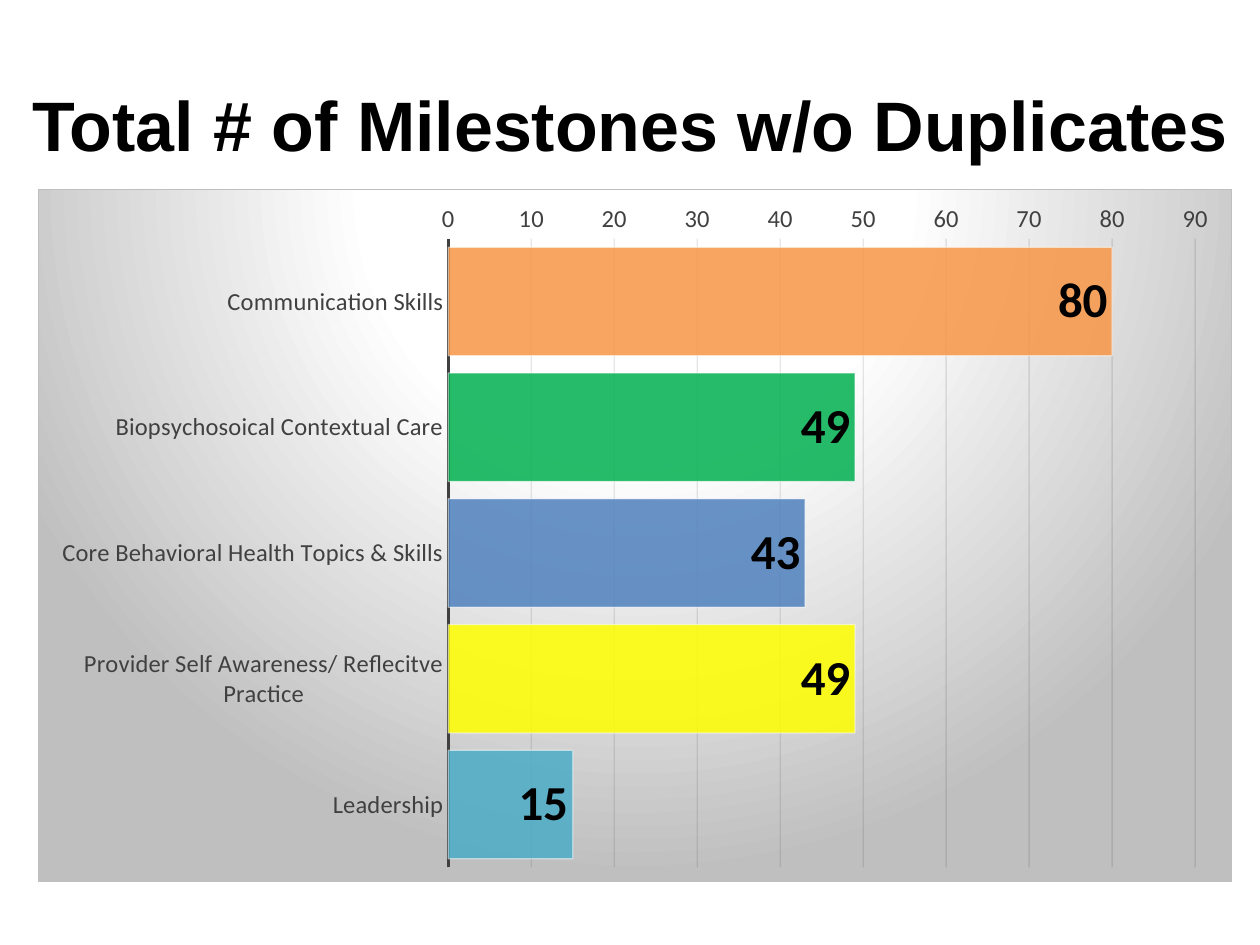
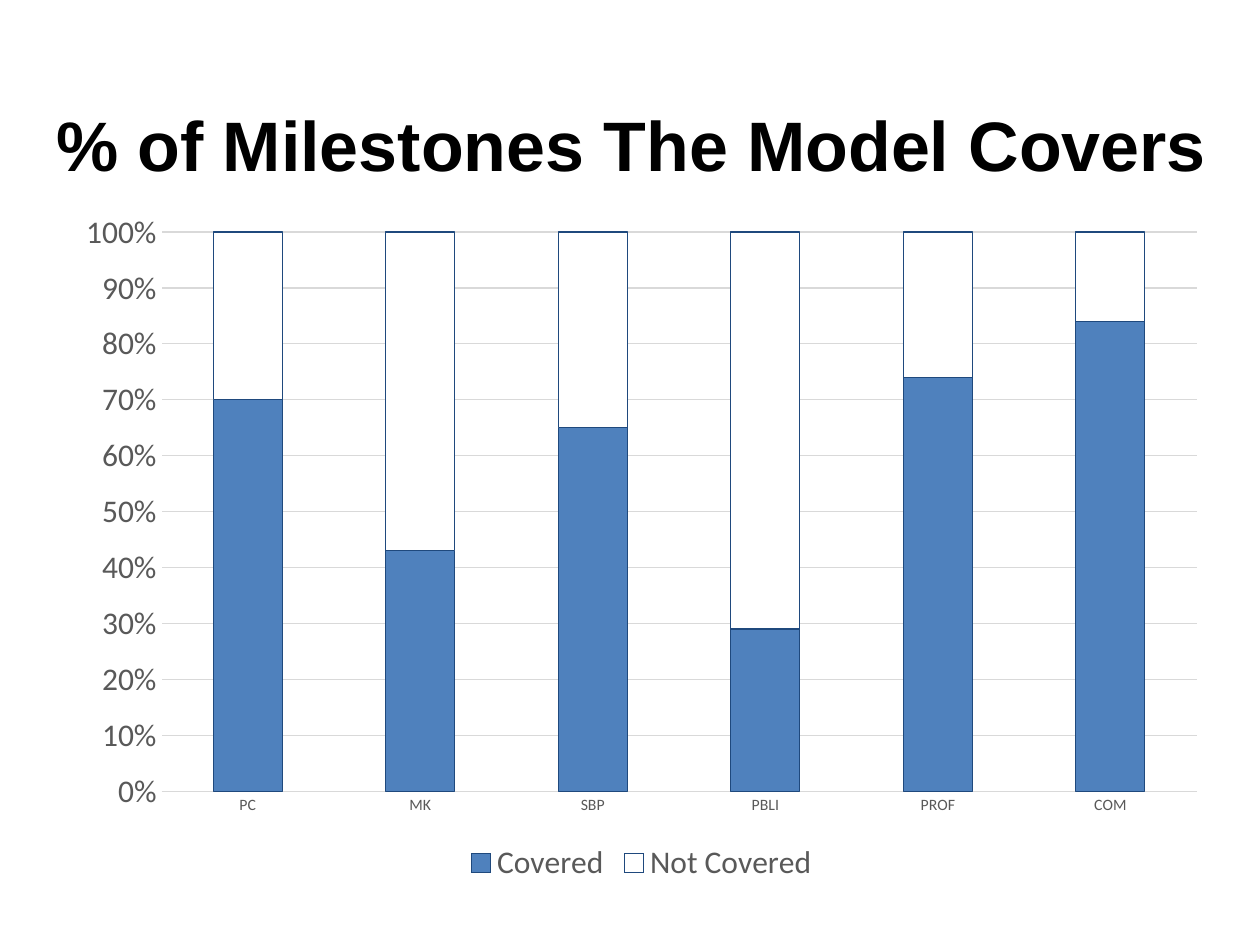
import dataclasses

import lxml.etree
import pptx
import pptx.chart.data
import pptx.dml.color
import pptx.enum.chart
import pptx.enum.text
import pptx.oxml
import pptx.oxml.ns
import pptx.util

Pt = pptx.util.Pt
Color = pptx.dml.color.RGBColor.from_string
ChartType = pptx.enum.chart.XL_CHART_TYPE
TickMark = pptx.enum.chart.XL_TICK_MARK
qn = pptx.oxml.ns.qn


@dataclasses.dataclass(frozen=True)
class Theme:
    title_font: str = "Arial"
    chart_font: str = "Calibri"
    black: str = "000000"
    white: str = "FFFFFF"
    blue: str = "4F81BD"
    navy: str = "1F497D"
    orange: str = "F79646"
    green: str = "00B050"
    yellow: str = "FFFF00"
    teal: str = "4BACC6"
    dark_text: str = "404040"
    gray_text: str = "595959"
    faint_grid: str = "0D0D0D"
    light_grid: str = "D9D9D9"
    panel_gray: str = "BFBFBF"
    title_size: int = 40
    label_size: int = 28
    large_size: int = 18
    axis_size: int = 14
    small_size: int = 9
    chart_size: int = 10
    thin_line: float = 0.75
    axis_line: float = 1.5


theme = Theme()


def style_font(font, name, size, color, bold=False):
    font.name = name
    font.size = Pt(size)
    font.bold = bold
    font.color.rgb = Color(color)


def set_alpha(element, color_path, percent):
    """Make the colours found at color_path partly transparent."""
    for color in element.xpath(color_path):
        lxml.etree.SubElement(color, qn("a:alpha")).set("val", str(percent * 1000))


milestones = {
    "title": "Total # of Milestones w/o Duplicates",
    "title_box": (0, 33, 720, 75),
    "chart_box": (21.6, 108, 682.6, 396),
    "type": ChartType.BAR_CLUSTERED,
    "categories": ["Communication Skills", "Biopsychosoical Contextual Care",
                   "Core Behavioral Health Topics & Skills",
                   "Provider Self Awareness/ Reflecitve Practice", "Leadership"],
    "series": [("Series 1", [80, 49, 43, 49, 15], theme.blue)],
    "bar_line": theme.white,
    "gap": 16,
    "text_color": theme.dark_text,
    "category_size": theme.axis_size,
    "value_size": theme.axis_size,
    "category_line": (theme.dark_text, theme.axis_line),
    "grid": theme.faint_grid,
    "number_format": "General",
}
coverage = {
    "title": "% of Milestones The Model Covers",
    "title_box": (18.7, 50.4, 684, 63.4),
    "chart_box": (36, 113.8, 661, 393.8),
    "type": ChartType.COLUMN_STACKED_100,
    "categories": ["PC", "MK", "SBP", "PBLI", "PROF", "COM"],
    "series": [("Covered", [70, 43, 65, 29, 74, 84], theme.blue),
               ("Not Covered", [30, 57, 35, 71, 26, 16], theme.white)],
    "bar_line": theme.navy,
    "gap": 150,
    "text_color": theme.gray_text,
    "category_size": theme.small_size,
    "value_size": theme.large_size,
    "category_line": (theme.light_grid, theme.thin_line),
    "grid": theme.light_grid,
    "number_format": "0%",
}

deck = pptx.Presentation()
deck.slide_width, deck.slide_height = Pt(720), Pt(540)
charts = []

for content in (milestones, coverage):
    page = deck.slides.add_slide(deck.slide_layouts[6])
    title_box = page.shapes.add_textbox(*map(Pt, content["title_box"]))
    frame = title_box.text_frame
    frame.word_wrap = True
    frame.vertical_anchor = pptx.enum.text.MSO_ANCHOR.MIDDLE
    para = frame.paragraphs[0]
    para.alignment = pptx.enum.text.PP_ALIGN.CENTER
    span = para.add_run()
    span.text = content["title"]
    style_font(span.font, theme.title_font, theme.title_size, theme.black, bold=True)

    data = pptx.chart.data.CategoryChartData()
    data.categories = content["categories"]
    for name, values, _ in content["series"]:
        data.add_series(name, values)
    chart = page.shapes.add_chart(
        content["type"], *map(Pt, content["chart_box"]), data).chart
    charts.append(chart)
    chart.has_title = False
    chart.has_legend = False
    style_font(chart.font, theme.chart_font, theme.chart_size, theme.black)

    plot = chart.plots[0]
    plot.gap_width = content["gap"]
    plot.vary_by_categories = False
    for series, (_, _, color) in zip(plot.series, content["series"]):
        series.format.fill.solid()
        series.format.fill.fore_color.rgb = Color(color)
        series.format.line.color.rgb = Color(content["bar_line"])
        series.format.line.width = Pt(theme.thin_line)

    category_axis, value_axis = chart.category_axis, chart.value_axis
    for axis, size in ((category_axis, content["category_size"]),
                       (value_axis, content["value_size"])):
        axis.major_tick_mark = axis.minor_tick_mark = TickMark.NONE
        style_font(axis.tick_labels.font, theme.chart_font, size, content["text_color"])
    line_color, line_width = content["category_line"]
    category_axis.format.line.color.rgb = Color(line_color)
    category_axis.format.line.width = Pt(line_width)
    value_axis.format.line.fill.background()
    value_axis.tick_labels.number_format = content["number_format"]
    value_axis.tick_labels.number_format_is_linked = False
    value_axis.has_major_gridlines = True
    grid_line = value_axis.major_gridlines.format.line
    grid_line.color.rgb = Color(content["grid"])
    grid_line.width = Pt(theme.thin_line)

milestone_chart, coverage_chart = charts

# Milestone totals: one colour per bar, faint grid and a shaded panel
milestone_chart.category_axis.reverse_order = True
value_axis = milestone_chart.value_axis
value_axis.minimum_scale, value_axis.maximum_scale = 0, 90
value_axis.major_unit = 10
plot = milestone_chart.plots[0]
bar_colors = (theme.orange, theme.green, theme.blue, theme.yellow, theme.teal)
for index, color in enumerate(bar_colors):
    bar_format = plot.series[0].points[index].format
    bar_format.fill.solid()
    bar_format.fill.fore_color.rgb = Color(color)
    bar_format.line.color.rgb = Color(theme.white)
    bar_format.line.width = Pt(theme.thin_line)
labels = plot.series[0].data_labels
labels.show_value = True
labels.position = pptx.enum.chart.XL_LABEL_POSITION.INSIDE_END
style_font(labels.font, theme.chart_font, theme.label_size, theme.black, bold=True)

chart_xml = milestone_chart.element
set_alpha(chart_xml, ".//c:ser//c:spPr/a:solidFill/a:srgbClr", 85)
set_alpha(chart_xml, ".//c:ser//c:spPr/a:ln//a:srgbClr", 50)
set_alpha(chart_xml, ".//c:majorGridlines//a:srgbClr", 10)

stops = "".join(
    f'<a:gs pos="{percent * 1000}"><a:srgbClr val="{color}"/></a:gs>'
    for percent, color in ((0, theme.white), (39, theme.white), (100, theme.panel_gray)))
panel = pptx.oxml.parse_xml(
    f'<c:spPr {pptx.oxml.ns.nsdecls("c", "a")}>'
    f'<a:gradFill><a:gsLst>{stops}</a:gsLst><a:path path="circle">'
    '<a:fillToRect l="50000" t="-80000" r="50000" b="180000"/></a:path></a:gradFill>'
    f'<a:ln w="{Pt(theme.thin_line)}"><a:solidFill><a:srgbClr val="{theme.panel_gray}"/>'
    '</a:solidFill></a:ln></c:spPr>')
chart_xml.find(qn("c:chart")).addnext(panel)

# Coverage: stacked columns with a legend below
coverage_chart.plots[0].overlap = 100
coverage_chart.has_legend = True
legend = coverage_chart.legend
legend.position = pptx.enum.chart.XL_LEGEND_POSITION.BOTTOM
legend.include_in_layout = False
style_font(legend.font, theme.chart_font, theme.large_size, theme.gray_text)

deck.save("out.pptx")
